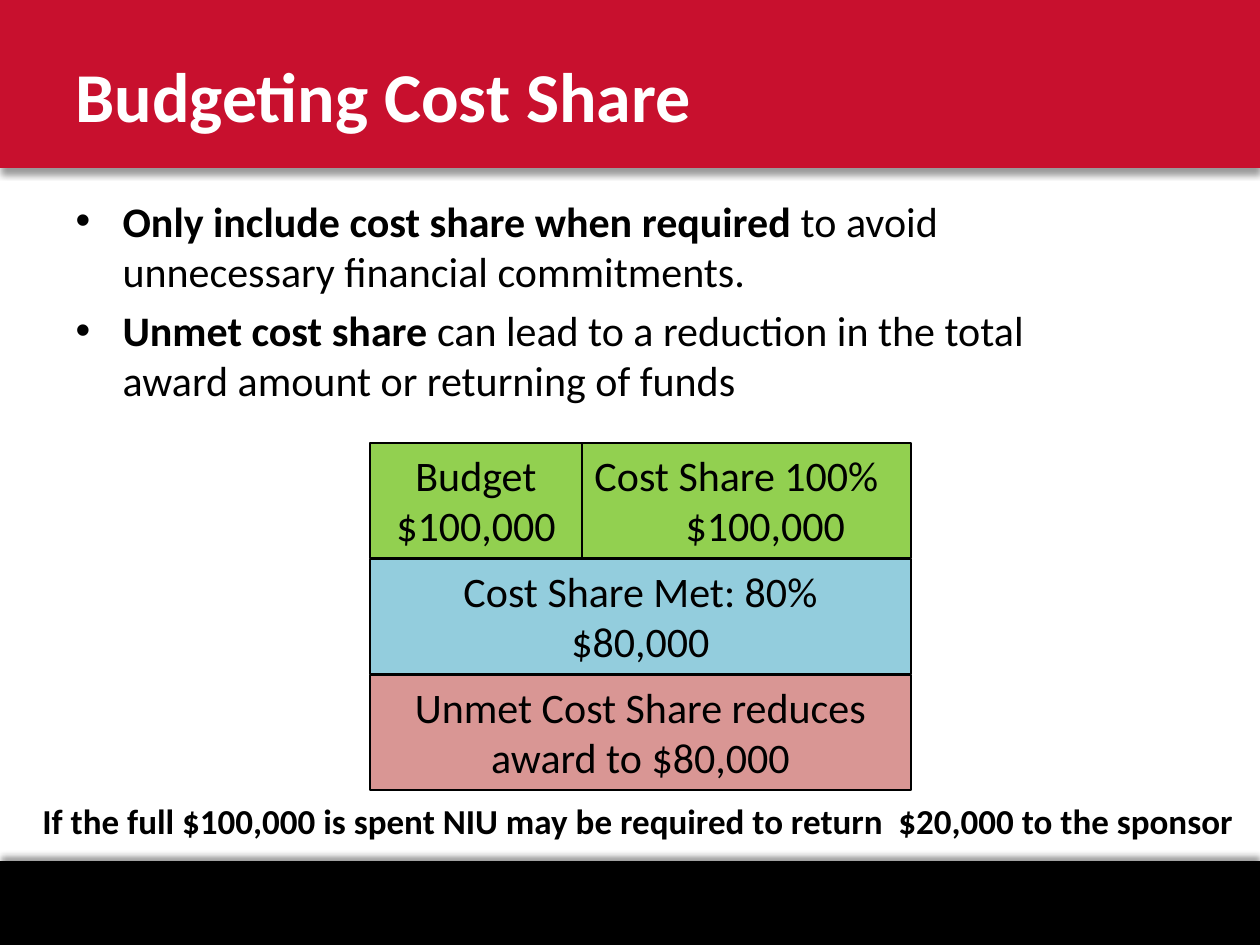
import pptx
import pptx.dml.color
import pptx.enum.shapes
import pptx.enum.text
import pptx.oxml.ns
import pptx.util
from dataclasses import dataclass
from lxml import etree

PX = 914400 / 126
ALIGN = pptx.enum.text.PP_ALIGN
ANCHOR = pptx.enum.text.MSO_ANCHOR


@dataclass(frozen=True)
class Theme:
    font: str = "Calibri"
    red: str = "C8102E"
    black: str = "000000"
    white: str = "FFFFFF"
    green: str = "92D050"
    blue: str = "93CDDD"
    rose: str = "D99694"
    title_size: int = 40
    body_size: int = 24
    note_size: int = 20


THEME = Theme()


def px(value):
    return pptx.util.Emu(round(value * PX))


def rgb(value):
    return pptx.dml.color.RGBColor.from_string(value)


def add_element(parent, tag, **attributes):
    element = etree.SubElement(parent, pptx.oxml.ns.qn(tag))
    for name, value in attributes.items():
        element.set(name, str(value))
    return element


def format_run(run, size, color=THEME.black, bold=False):
    run.font.name = THEME.font
    run.font.size = pptx.util.Pt(size)
    run.font.bold = bold
    run.font.color.rgb = rgb(color)


def set_margins(paragraph, left=0, right=0, indent=0):
    properties = paragraph._p.get_or_add_pPr()
    for name, value in (("marL", left), ("marR", right), ("indent", indent)):
        properties.set(name, str(px(value)))
    return properties


def place(shape, left, top, width, height):
    shape.left, shape.top = px(left), px(top)
    shape.width, shape.height = px(width), px(height)


def add_rectangle(slide, left, top, width, height, fill):
    shape = slide.shapes.add_shape(
        pptx.enum.shapes.MSO_SHAPE.RECTANGLE,
        px(left), px(top), px(width), px(height))
    shape.shadow.inherit = False
    shape.fill.solid()
    shape.fill.fore_color.rgb = rgb(fill)
    return shape


def add_band(slide, top, height, fill, shadow_degrees):
    """Full-width band behind the text, with a soft shadow."""
    band = add_rectangle(slide, 0, top, 1260, height, fill)
    band.line.fill.background()
    effects = band._element.spPr.find(pptx.oxml.ns.qn("a:effectLst"))
    shadow = add_element(effects, "a:outerShdw",
                         blurRad=pptx.util.Pt(4), dist=pptx.util.Pt(3),
                         dir=shadow_degrees * 60000, rotWithShape=0)
    color = add_element(shadow, "a:srgbClr", val=THEME.black)
    add_element(color, "a:alpha", val=40000)
    slide.shapes._spTree.insert(2, band._element)


def fill_title(slide, text):
    title = slide.shapes.title
    place(title, 63, 21, 1040, 147)
    title.text_frame.text = text
    title.text_frame.vertical_anchor = ANCHOR.MIDDLE
    paragraph = title.text_frame.paragraphs[0]
    paragraph.alignment = ALIGN.LEFT
    format_run(paragraph.runs[0], THEME.title_size, THEME.white, True)


def fill_bullets(slide, items):
    body = slide.placeholders[1]
    place(body, 63, 189, 1081, 670)
    frame = body.text_frame
    frame.auto_size = pptx.enum.text.MSO_AUTO_SIZE.NONE
    for index, (lead, rest) in enumerate(items):
        paragraph = frame.add_paragraph() if index else frame.paragraphs[0]
        properties = set_margins(paragraph, left=47, indent=-47)
        add_element(properties, "a:buFont", typeface="Arial")
        add_element(properties, "a:buChar", char="•")
        paragraph.space_before = pptx.util.Pt(4.8 if index else 0)
        for text, bold in ((lead, True), (rest, False)):
            run = paragraph.add_run()
            run.text = text
            format_run(run, THEME.body_size, bold=bold)


def add_box(slide, left, top, width, height, fill, text):
    box = add_rectangle(slide, left, top, width, height, fill)
    box.line.color.rgb = rgb(THEME.black)
    box.line.width = pptx.util.Pt(0.75)
    frame = box.text_frame
    frame.word_wrap = True
    frame.vertical_anchor = ANCHOR.TOP
    frame.text = text
    for paragraph in frame.paragraphs:
        paragraph.alignment = ALIGN.CENTER
        format_run(paragraph.runs[0], THEME.body_size)
    return box


def add_budget_boxes(slide):
    left, top, width, height, step = 370, 443, 541, 115, 116
    budget_width = 212

    # Top row: budget beside its matching cost share
    add_box(slide, left, top, budget_width, height, THEME.green,
            "Budget $100,000")
    share = add_box(slide, left + budget_width, top, width - budget_width,
                    height, THEME.green, "Cost Share 100%\n$100,000")
    label, amount = share.text_frame.paragraphs
    set_margins(label, right=20)
    set_margins(amount, left=38)

    # Full-width rows: what was met and what follows
    rows = (
        (THEME.blue, "Cost Share Met: 80%\n$80,000"),
        (THEME.rose, "Unmet Cost Share reduces award to $80,000"),
    )
    for index, (fill, text) in enumerate(rows, start=1):
        add_box(slide, left, top + index * step, width, height, fill, text)


def add_note(slide, text):
    note = slide.shapes.add_textbox(px(-33), px(793), px(1327), px(55))
    note.text_frame.word_wrap = True
    note.text_frame.text = text
    paragraph = note.text_frame.paragraphs[0]
    set_margins(paragraph, left=63)
    format_run(paragraph.runs[0], THEME.note_size, bold=True)


def main():
    presentation = pptx.Presentation()
    presentation.slide_width = px(1260)
    presentation.slide_height = px(945)
    slide = presentation.slides.add_slide(presentation.slide_layouts[1])

    # Header and footer bands
    add_band(slide, 0, 168, THEME.red, 90)
    add_band(slide, 861, 84, THEME.black, 270)

    # Title and bullets
    fill_title(slide, "Budgeting Cost Share")
    fill_bullets(slide, (
        ("Only include cost share when required ",
         "to avoid unnecessary financial commitments."),
        ("Unmet cost share ",
         "can lead to a reduction in the total award amount "
         "or returning of funds"),
    ))

    # Worked example and its consequence
    add_budget_boxes(slide)
    add_note(slide, "If the full $100,000 is spent NIU may be required "
                    "to return  $20,000 to the sponsor")

    presentation.save("out.pptx")


if __name__ == "__main__":
    main()
